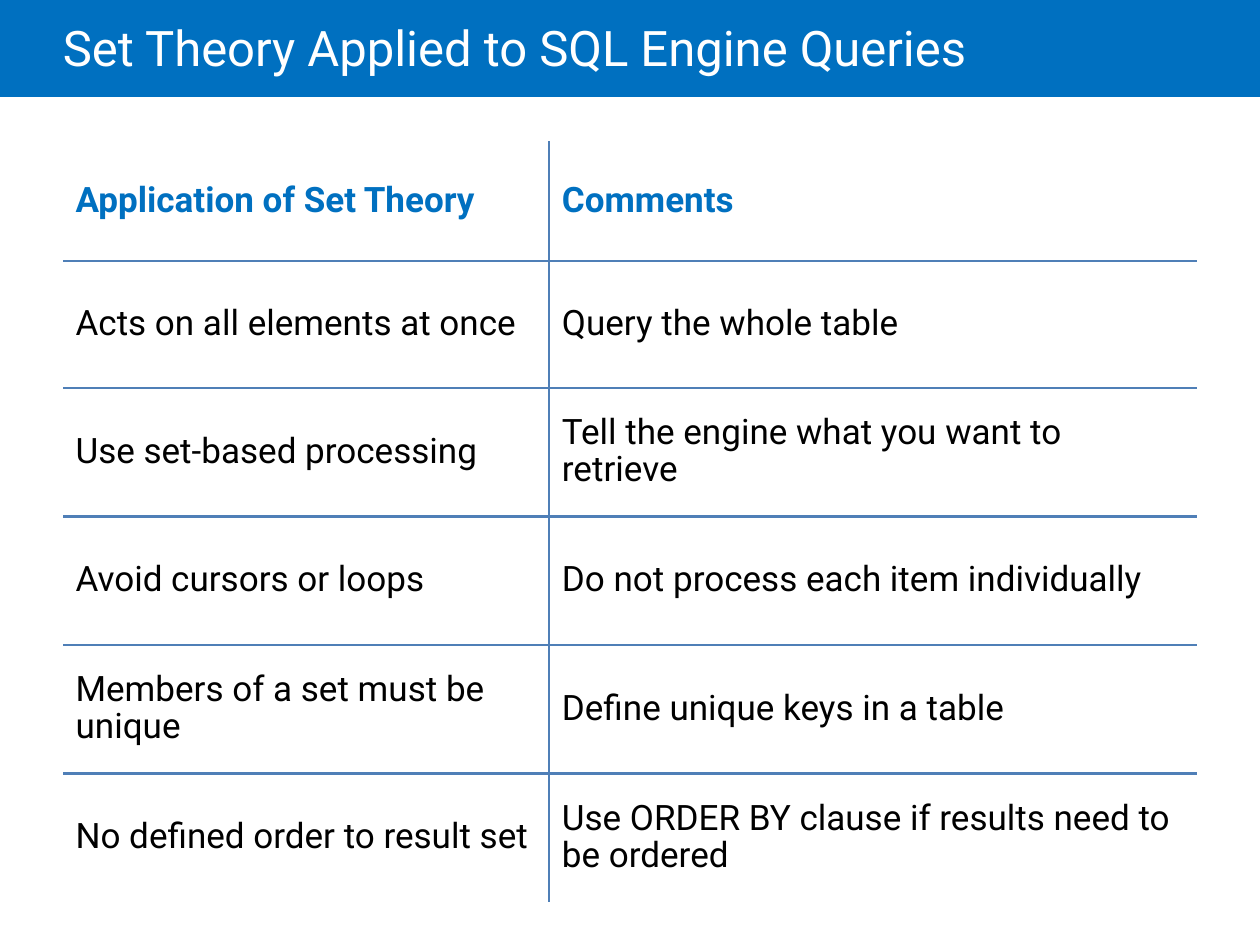
from lxml import etree
from pptx import Presentation
from pptx.dml import color
from pptx.enum import shapes, text
from pptx.oxml import ns
from pptx.util import Inches, Pt

BLUE = "0070C0"
RULE = "4F7FB7"


def rgb(value):
    return color.RGBColor.from_string(value)


def write(frame, words, size=20, ink="000000", bold=False, spacing=0.9):
    frame.word_wrap = True
    frame.vertical_anchor = text.MSO_ANCHOR.MIDDLE
    line = frame.paragraphs[0]
    line.alignment = text.PP_ALIGN.LEFT
    line.line_spacing = spacing
    run = line.add_run()
    run.text = words
    run.font.name = "Roboto"
    run.font.size = Pt(size)
    run.font.bold = bold
    run.font.color.rgb = rgb(ink)


deck = Presentation()
deck.slide_width = Inches(10)
deck.slide_height = Inches(7.5)
slide = deck.slides.add_slide(deck.slide_layouts[6])

banner = slide.shapes.add_shape(
    shapes.MSO_SHAPE.RECTANGLE, Inches(0), Inches(0), Inches(10), Inches(0.77))
banner.shadow.inherit = False
banner.fill.solid()
banner.fill.fore_color.rgb = rgb(BLUE)
banner.line.fill.background()

title = slide.shapes.add_textbox(Inches(0.5), Inches(0), Inches(8.5), Inches(0.81))
title.text_frame.margin_left = Inches(0)
write(title.text_frame, "Set Theory Applied to SQL Engine Queries",
      size=28, ink="FFFFFF", spacing=0.85)

principles = [
    ("Application of Set Theory", "Comments"),
    ("Acts on all elements at once", "Query the whole table"),
    ("Use set-based processing", "Tell the engine what you want to retrieve"),
    ("Avoid cursors or loops", "Do not process each item individually"),
    ("Members of a set must be unique", "Define unique keys in a table"),
    ("No defined order to result set", "Use ORDER BY clause if results need to be ordered"),
]
last_row = len(principles) - 1

grid = slide.shapes.add_table(
    len(principles), 2, Inches(0.5), Inches(1.12), Inches(9), Inches(6.04)).table
grid.first_row = False
grid.horz_banding = False
for column, width in zip(grid.columns, (3.86, 5.14)):
    column.width = Inches(width)
for row, height in zip(grid.rows, [0.95, 1.01] + [1.02] * 4):
    row.height = Inches(height)

for r, principle in enumerate(principles):
    for c, words in enumerate(principle):
        cell = grid.cell(r, c)
        cell.margin_left = cell.margin_right = Inches(0.1)
        cell.margin_top = cell.margin_bottom = Inches(0.1)
        cell.vertical_anchor = text.MSO_ANCHOR.MIDDLE
        write(cell.text_frame, words, ink=BLUE if r == 0 else "000000", bold=r == 0)

        inner = {"lnL": c == 1, "lnR": c == 0, "lnT": r > 0, "lnB": r < last_row}
        properties = cell._tc.get_or_add_tcPr()
        for side, ruled in inner.items():
            border = etree.SubElement(properties, ns.qn(f"a:{side}"), w=str(Pt(1.5)))
            if ruled:
                paint = etree.SubElement(border, ns.qn("a:solidFill"))
                etree.SubElement(paint, ns.qn("a:srgbClr"), val=RULE)
            else:
                etree.SubElement(border, ns.qn("a:noFill"))
        cell.fill.background()

deck.save("out.pptx")
